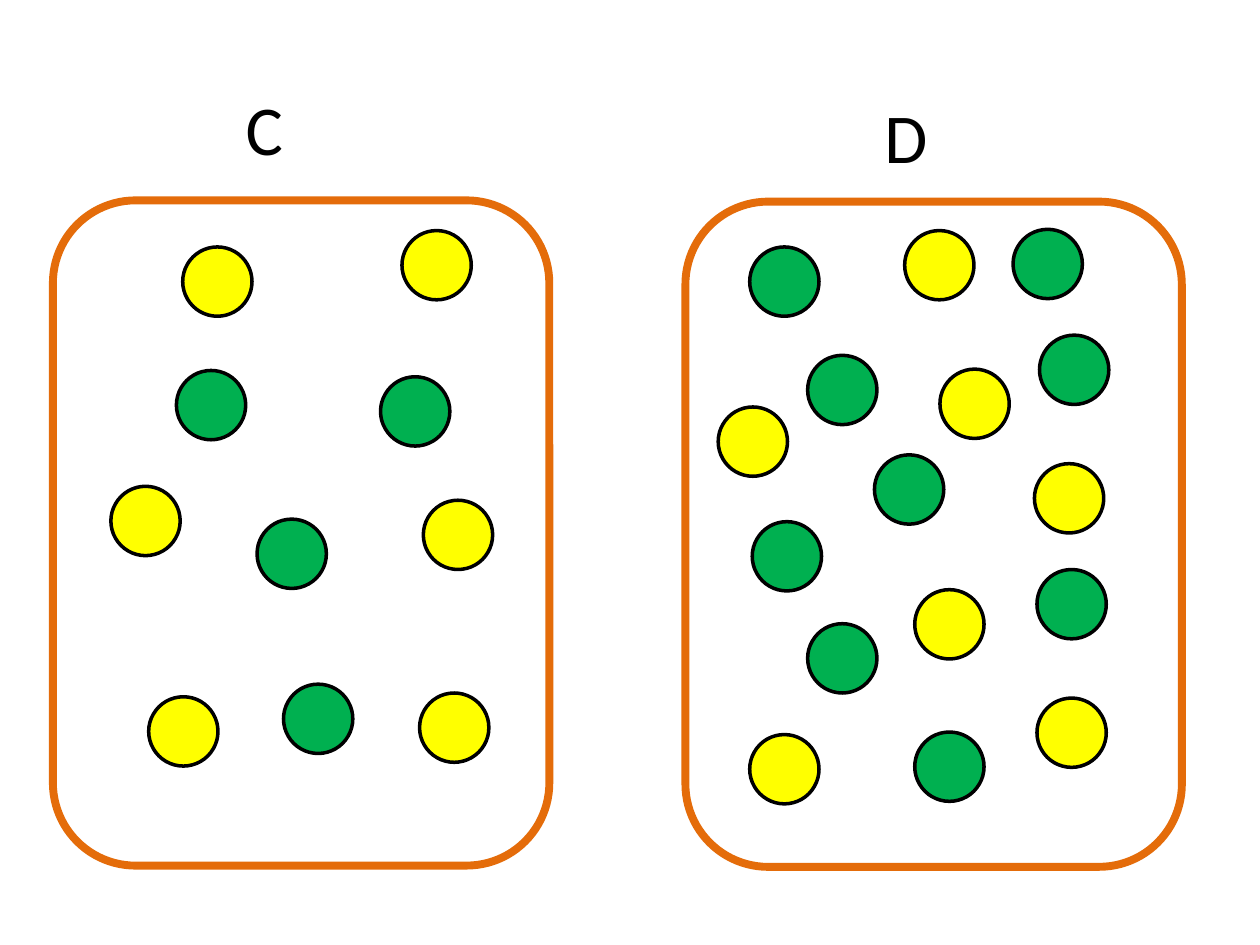
from pptx import Presentation
from pptx.dml.color import RGBColor
from pptx.enum.shapes import MSO_SHAPE
from pptx.enum.text import MSO_AUTO_SIZE
from pptx.util import Inches, Pt

OVAL = MSO_SHAPE.OVAL
ROUND = MSO_SHAPE.ROUNDED_RECTANGLE
GROW = MSO_AUTO_SIZE.SHAPE_TO_FIT_TEXT

COLORS = {
    "white": "FFFFFF",
    "black": "000000",
    "orange": "E46C0A",
    "green": "00B050",
    "yellow": "FFFF00",
}
FONT = "Calibri"
BALL = 0.55
BOX = (3.94, 5.28)

BOXES = [
    {
        "name": "D",
        "label": (6.92, 0.69),
        "frame": (5.44, 1.6),
        "balls": {
            "green": [(6.41, 2.82), (6.41, 4.95), (6.94, 3.61),
                      (5.95, 1.96), (8.04, 1.82), (7.26, 5.81),
                      (5.97, 4.14), (8.23, 4.52), (8.25, 2.66)],
            "yellow": [(5.95, 5.83), (7.46, 2.93), (8.23, 5.54),
                       (7.26, 4.68), (8.21, 3.68), (5.7, 3.23),
                       (7.18, 1.83)],
        },
    },
    {
        "name": "C",
        "label": (1.85, 0.63),
        "frame": (0.42, 1.59),
        "balls": {
            "green": [(1.4, 2.94), (3.02, 2.99), (2.25, 5.43),
                      (2.04, 4.12)],
            "yellow": [(3.19, 1.83), (0.88, 3.86), (3.33, 5.5),
                       (1.18, 5.53), (3.36, 3.97), (1.45, 1.96)],
        },
    },
]


def color(name):
    """Return the named colour."""
    return RGBColor.from_string(COLORS[name])


def add_form(group, kind, spot, size, fill, line, width):
    """Add a filled and outlined shape to a group."""
    form = group.shapes.add_shape(kind, *map(Inches, spot + size))
    form.shadow.inherit = False
    form.fill.solid()
    form.fill.fore_color.rgb = color(fill)
    form.line.color.rgb = color(line)
    form.line.width = Pt(width)


def add_box(slide, box):
    """Add a rounded frame grouped with its balls."""
    group = slide.shapes.add_group_shape()
    add_form(group, ROUND, box["frame"], BOX, "white", "orange", 4.5)
    for fill, spots in box["balls"].items():
        for spot in spots:
            add_form(group, OVAL, spot, (BALL, BALL), fill, "black", 2)


def add_label(slide, text, spot):
    """Add the letter above a box."""
    label = slide.shapes.add_textbox(*map(Inches, spot + (0.58, 0.77)))
    frame = label.text_frame
    frame.word_wrap = True
    frame.auto_size = GROW
    frame.text = text
    font = frame.paragraphs[0].runs[0].font
    font.name = FONT
    font.size = Pt(40)
    font.color.rgb = color("black")


def main():
    """Build the slide and save it."""
    deck = Presentation()
    deck.slide_width = Inches(10)
    deck.slide_height = Inches(7.5)
    slide = deck.slides.add_slide(deck.slide_layouts[6])
    for box in BOXES:
        add_box(slide, box)
    for box in reversed(BOXES):
        add_label(slide, box["name"], box["label"])
    deck.save("out.pptx")


if __name__ == "__main__":
    main()
